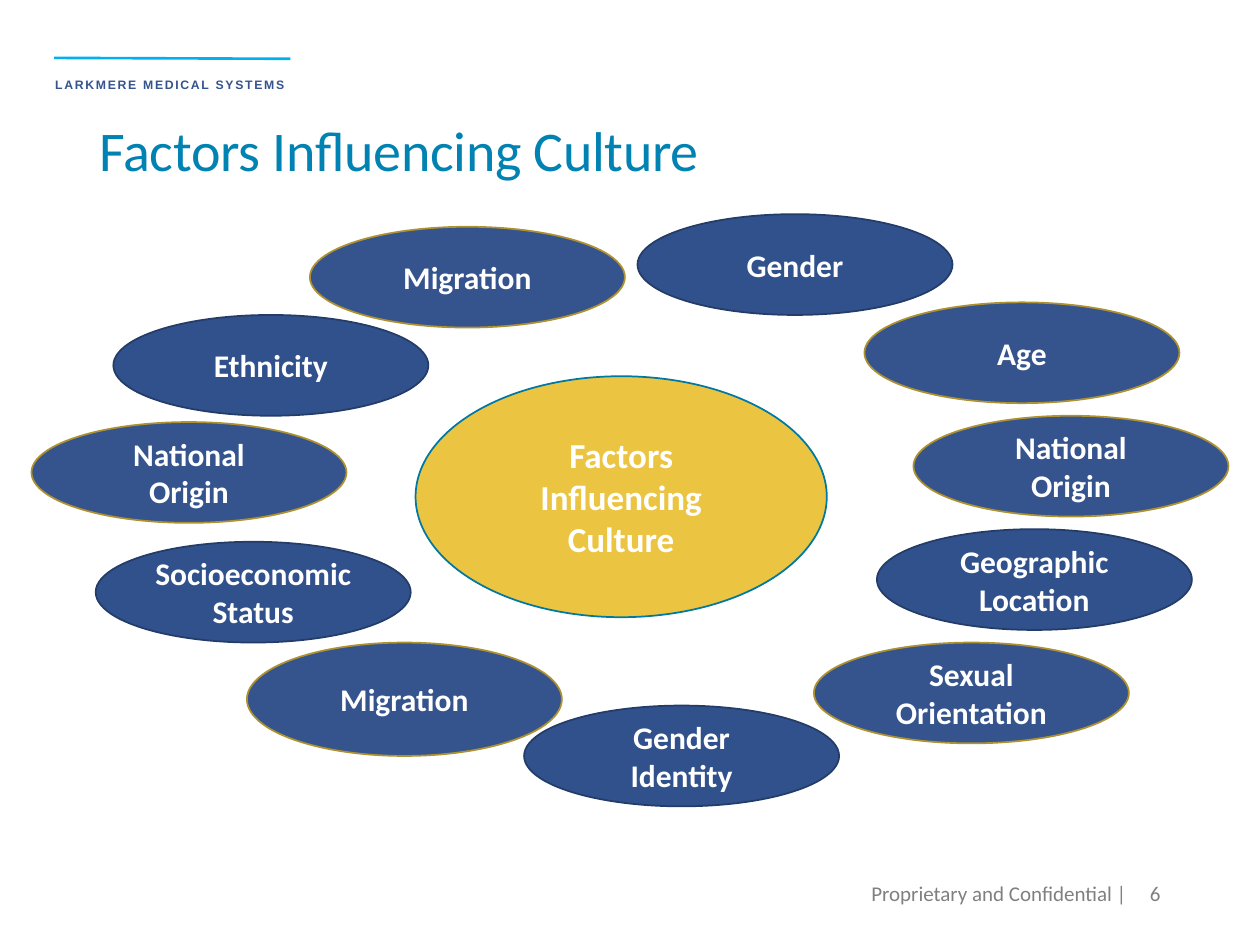
import pptx
import pptx.util
import pptx.dml.color
import pptx.enum.shapes
import pptx.enum.text
import pptx.oxml

Pt = pptx.util.Pt
ALIGN = pptx.enum.text.PP_ALIGN
ANCHOR = pptx.enum.text.MSO_ANCHOR
COLORS = {
    "header": "35538D", "rule": "00B0F0", "title": "0082B2", "footer": "808080",
    "gold": "EBC441", "teal": "0079A1", "blue": "35538D", "gold edge": "AE9130",
    "navy": "31518C", "navy edge": "243C68", "white": "FFFFFF",
}


def rgb(name):
    return pptx.dml.color.RGBColor.from_string(COLORS[name])


def write(box, text, size, color, align, bold=False, font="Calibri", anchor=ANCHOR.MIDDLE):
    frame = box.text_frame
    frame.text = text
    frame.word_wrap = True
    frame.vertical_anchor = anchor
    para = frame.paragraphs[0]
    para.alignment = align
    para.font.name = font
    para.font.size = Pt(size)
    para.font.bold = bold
    para.font.color.rgb = rgb(color)
    return para


deck = pptx.Presentation()
deck.slide_width, deck.slide_height = Pt(720), Pt(540)
page = deck.slides.add_slide(deck.slide_layouts[5])

# Header name and rule
header = page.shapes.add_textbox(Pt(24.5), Pt(33.1), Pt(147), Pt(21))
para = write(header, "LARKMERE MEDICAL SYSTEMS", 7, "header", ALIGN.LEFT, True, "Arial", ANCHOR.TOP)
header.text_frame.word_wrap = False
para.line_spacing = Pt(16)
para.runs[0].font._element.set("spc", "100")

rule = page.shapes.add_connector(
    pptx.enum.shapes.MSO_CONNECTOR.STRAIGHT, Pt(31), Pt(33.1), Pt(166), Pt(33.6))
rule.line.color.rgb = rgb("rule")
rule.line.width = Pt(1.5)
rule._element.spPr.append(pptx.oxml.parse_xml(
    '<a:effectLst xmlns:a="http://schemas.openxmlformats.org/drawingml/2006/main"/>'))

# Title
title = page.shapes.title
title.left, title.top, title.width, title.height = Pt(49.7), Pt(60.5), Pt(620.6), Pt(47.5)
para = write(title, "Factors Influencing Culture", 32, "title", ALIGN.LEFT, anchor=ANCHOR.BOTTOM)
title.text_frame.auto_size = pptx.enum.text.MSO_AUTO_SIZE.NONE
para.line_spacing = 0.8
para.runs[0].font._element.set("spc", "-20")

# Footer and page number
for text, left, width in [("Proprietary and Confidential |", 407.5, 243.4), ("6", 637.2, 33.1)]:
    footer = page.shapes.add_textbox(Pt(left), Pt(496), Pt(width), Pt(28.8))
    write(footer, text, 12, "footer", ALIGN.RIGHT)

# Central oval, then the factors around it
GOLD, BLUE, NAVY = ("gold", "teal"), ("blue", "gold edge"), ("navy", "navy edge")
WIDTH, HEIGHT = 180, 57.6
ovals = [
    ("Factors Influencing Culture", 237.5, 215, 235, 137.7, GOLD, 20),
    ("Age", 494, 172.8, WIDTH, HEIGHT, BLUE, 18),
    ("Gender", 364.3, 122.4, WIDTH, HEIGHT, NAVY, 18),
    ("National Origin", 522, 237.6, WIDTH, HEIGHT, BLUE, 18),
    ("Geographic Location", 501.1, 302.4, WIDTH, HEIGHT, NAVY, 18),
    ("Sexual Orientation", 465.1, 367.2, WIDTH, HEIGHT, BLUE, 18),
    ("Ethnicity", 64.8, 180, WIDTH, HEIGHT, NAVY, 18),
    ("Migration", 177.1, 129.6, WIDTH, HEIGHT, BLUE, 18),
    ("Socioeconomic Status", 54.7, 309.6, WIDTH, HEIGHT, NAVY, 18),
    ("National Origin", 18, 241.2, WIDTH, HEIGHT, BLUE, 18),
    ("Migration", 141.1, 367.2, WIDTH, 64.8, BLUE, 18),
    ("Gender Identity", 299.5, 403.2, WIDTH, HEIGHT, NAVY, 18),
]
for text, left, top, width, height, (fill, edge), size in ovals:
    oval = page.shapes.add_shape(
        pptx.enum.shapes.MSO_SHAPE.FLOWCHART_CONNECTOR, Pt(left), Pt(top), Pt(width), Pt(height))
    oval.shadow.inherit = False
    oval.fill.solid()
    oval.fill.fore_color.rgb = rgb(fill)
    oval.line.color.rgb = rgb(edge)
    oval.line.width = Pt(1)
    write(oval, text, size, "white", ALIGN.CENTER, True)

deck.save("out.pptx")
